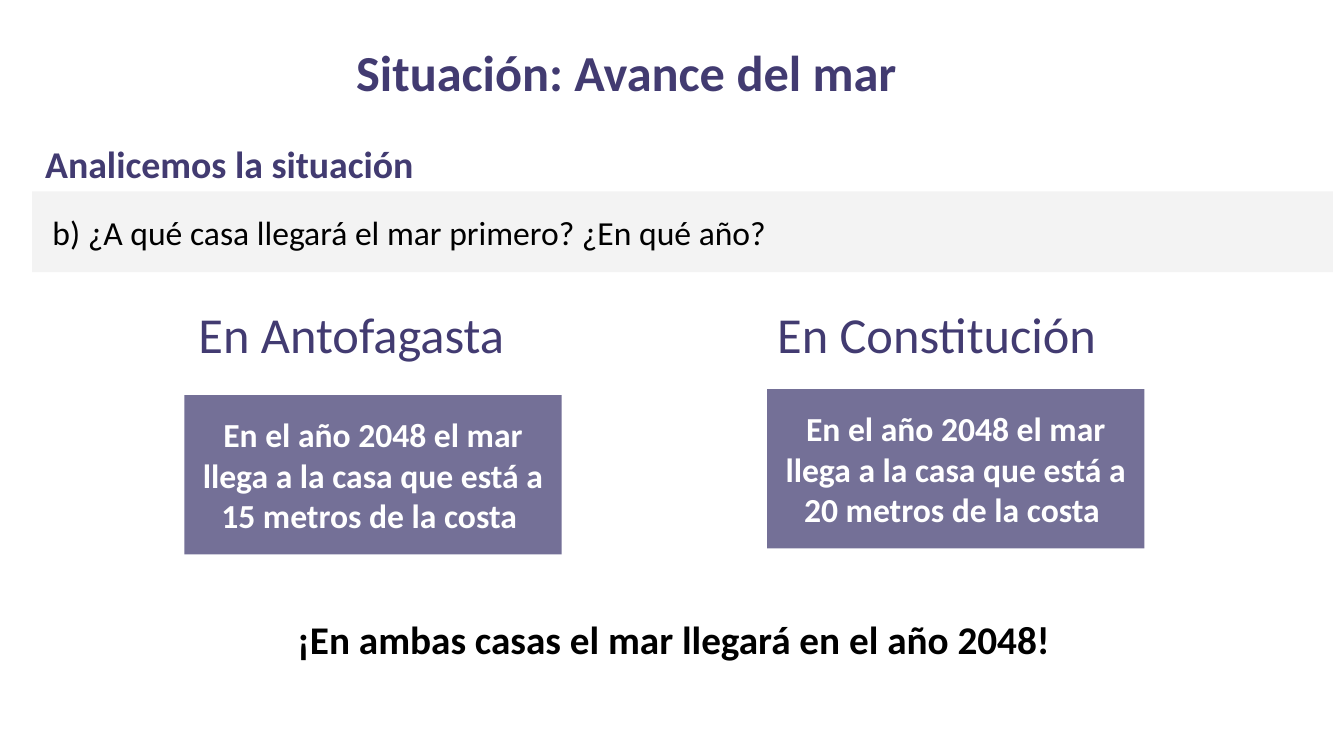
"""Slide comparing when the sea reaches the houses in Antofagasta and Constitución."""
from pptx import Presentation, util as u
from pptx.dml.color import RGBColor
from pptx.enum import shapes, text

PX = 9144
COLORS = {"purple": "423B71", "mauve": "747097", "gray": "F3F3F3",
          "black": "000000", "white": "FFFFFF"}
LEFT, CENTER = text.PP_ALIGN.LEFT, text.PP_ALIGN.CENTER
TOP, MIDDLE = text.MSO_ANCHOR.TOP, text.MSO_ANCHOR.MIDDLE

deck = Presentation()
deck.slide_width, deck.slide_height = u.Emu(1333 * PX), u.Emu(750 * PX)
slide = deck.slides.add_slide(deck.slide_layouts[6])


def write(box, words, size, color, bold=False, align=LEFT, anchor=TOP, inset=(10, 5)):
    frame = box.text_frame
    frame.word_wrap = True
    frame.vertical_anchor = anchor
    frame.margin_left = frame.margin_right = u.Emu(inset[0] * PX)
    frame.margin_top = frame.margin_bottom = u.Emu(inset[1] * PX)
    line = frame.paragraphs[0]
    line.alignment = align
    run = line.add_run()
    run.text = words
    run.font.name = "Calibri"
    run.font.size = u.Pt(size)
    run.font.bold = bold
    run.font.color.rgb = RGBColor.from_string(COLORS[color])


def panel(area, fill):
    box = slide.shapes.add_shape(shapes.MSO_SHAPE.RECTANGLE, *[u.Emu(n * PX) for n in area])
    box.shadow.inherit = False
    box.fill.solid()
    box.fill.fore_color.rgb = RGBColor.from_string(COLORS[fill])
    box.line.fill.background()
    return box


question = panel((32, 190, 1290, 80), "gray")
write(question, "b) ¿A qué casa llegará el mar primero? ¿En qué año?", 24, "black", inset=(20, 20))

headings = [
    ((175, 36, 893, 71), "Situación: Avance del mar", 36, "purple", True, CENTER),
    ((35, 135, 604, 56), "Analicemos la situación", 27, "purple", True, LEFT),
    ((187, 296, 365, 71), "En Antofagasta", 36, "purple", False, LEFT),
    ((761, 296, 374, 71), "En Constitución", 36, "purple", False, LEFT),
    ((285, 606, 796, 57), "¡En ambas casas el mar llegará en el año 2048!", 28, "black", True, LEFT),
]
for area, words, size, color, bold, align in headings:
    heading = slide.shapes.add_textbox(*[u.Emu(n * PX) for n in area])
    write(heading, words, size, color, bold, align)

for left, top, meters in [(761, 386, 20), (183, 392, 15)]:
    answer = panel((left, top, 374, 158), "mauve")
    write(answer, f"En el año 2048 el mar llega a la casa que está a {meters} metros de la costa ",
          24, "white", True, CENTER, MIDDLE)

deck.save("out.pptx")
